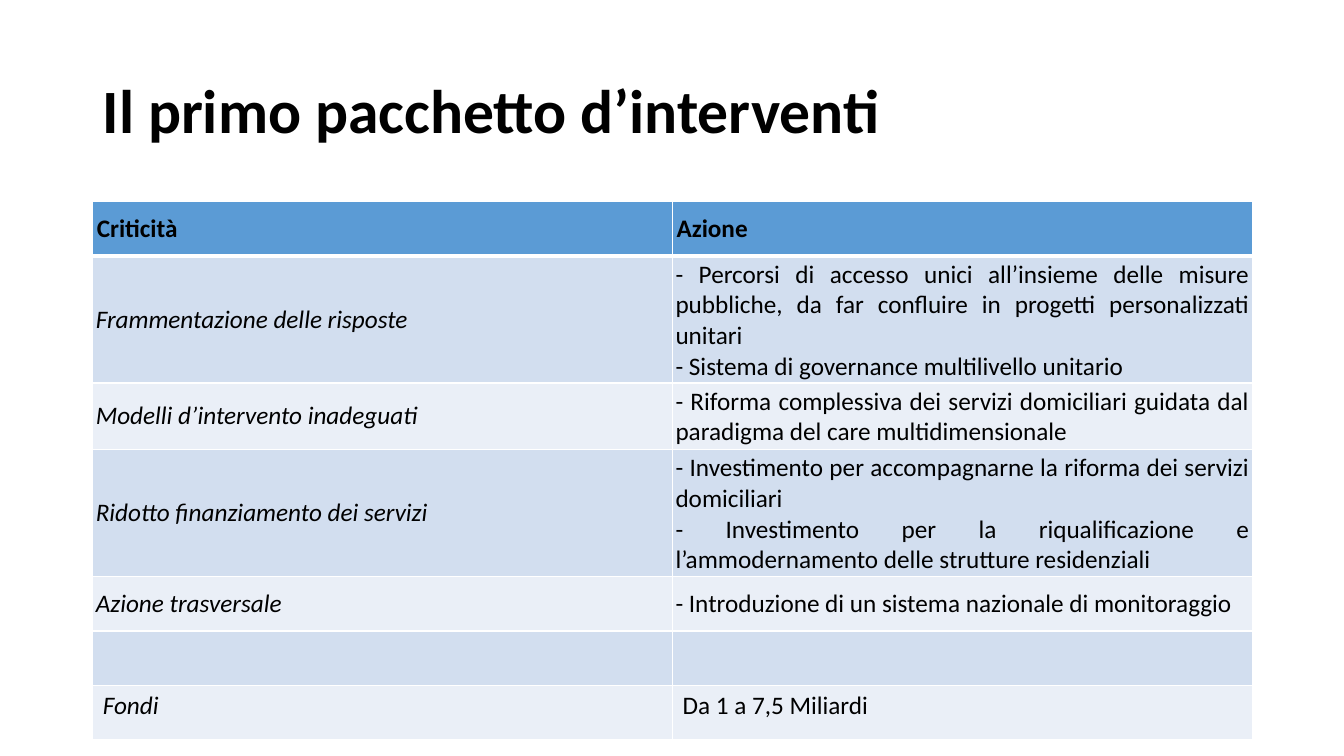
from lxml import etree
from pptx import Presentation
from pptx.dml.color import RGBColor
from pptx.enum.text import MSO_ANCHOR, PP_ALIGN
from pptx.oxml.ns import qn
from pptx.util import Inches, Pt

LEFT = PP_ALIGN.LEFT
JUSTIFY = PP_ALIGN.JUSTIFY
MIDDLE = MSO_ANCHOR.MIDDLE
TOP = MSO_ANCHOR.TOP
FONT = "Calibri"
COLOURS = {
    "text": "000000",
    "border": "FFFFFF",
    "header": "5B9BD5",
    "odd": "D2DEEF",
    "even": "EAEFF7",
}
HEADINGS = ("Criticità", "Azione")
INTERVENTIONS = [
    ("Frammentazione delle risposte", [
        "- Percorsi di accesso unici all’insieme delle misure pubbliche, "
        "da far confluire in progetti personalizzati unitari ",
        "- Sistema di governance multilivello unitario",
    ]),
    ("Modelli d’intervento inadeguati", [
        "- Riforma complessiva dei servizi domiciliari guidata dal "
        "paradigma del care multidimensionale",
    ]),
    ("Ridotto finanziamento dei servizi", [
        "- Investimento per accompagnarne la riforma dei servizi domiciliari ",
        "- Investimento per la riqualificazione e l’ammodernamento delle "
        "strutture residenziali",
    ]),
    ("Azione trasversale", [
        "- Introduzione di un sistema nazionale di monitoraggio",
    ]),
]
FUNDS = ("Fondi", "Da 1 a 7,5 Miliardi")
ROW_COUNT = len(INTERVENTIONS) + 3
ROW_HEIGHT = 0.54
COLUMN_WIDTH = 5.75


def write_text(frame, lines, size=18, bold=False, italic=False, align=LEFT, spacing=1.0):
    for index, line in enumerate(lines):
        para = frame.paragraphs[0] if index == 0 else frame.add_paragraph()
        para.alignment = align
        para.line_spacing = spacing
        span = para.add_run()
        span.text = line
        span.font.name = FONT
        span.font.size = Pt(size)
        span.font.bold = bold
        span.font.italic = italic
        span.font.color.rgb = RGBColor.from_string(COLOURS["text"])


def add_title(page, text):
    box = page.shapes.add_textbox(Inches(0.92), Inches(0.4), Inches(11.5), Inches(1.45))
    frame = box.text_frame
    frame.word_wrap = True
    frame.vertical_anchor = MIDDLE
    write_text(frame, [text], size=44, bold=True, align=JUSTIFY, spacing=0.9)


def set_borders(cell, bottom):
    properties = cell._tc.get_or_add_tcPr()
    for side, width in (("L", 1), ("R", 1), ("T", 1), ("B", bottom)):
        line = etree.SubElement(properties, qn(f"a:ln{side}"), w=str(Pt(width)))
        fill = etree.SubElement(line, qn("a:solidFill"))
        etree.SubElement(fill, qn("a:srgbClr"), val=COLOURS["border"])


def style_cell(cell, fill, bottom=1):
    set_borders(cell, bottom)
    cell.fill.solid()
    cell.fill.fore_color.rgb = RGBColor.from_string(COLOURS[fill])


def fill_cell(cell, lines, margin=None, anchor=MIDDLE, **text_format):
    cell.vertical_anchor = anchor
    if margin is not None:
        cell.margin_left = cell.margin_right = Inches(margin)
        cell.margin_top = cell.margin_bottom = Inches(0.03)
    write_text(cell.text_frame, lines, **text_format)


def add_interventions_table(page):
    table = page.shapes.add_table(
        ROW_COUNT, 2, Inches(0.92), Inches(2),
        Inches(2 * COLUMN_WIDTH), Inches(ROW_COUNT * ROW_HEIGHT),
    ).table
    for column in table.columns:
        column.width = Inches(COLUMN_WIDTH)
    for number, row in enumerate(table.rows):
        row.height = Inches(ROW_HEIGHT)
        for cell in row.cells:
            if number == 0:
                style_cell(cell, "header", bottom=3)
            else:
                style_cell(cell, "odd" if number % 2 else "even")

    for column, heading in enumerate(HEADINGS):
        fill_cell(table.cell(0, column), [heading], margin=0.04, bold=True)
    for number, (problem, actions) in enumerate(INTERVENTIONS, start=1):
        fill_cell(table.cell(number, 0), [problem], margin=0.03, italic=True)
        fill_cell(table.cell(number, 1), actions, margin=0.03, align=JUSTIFY)
    for column, text in enumerate(FUNDS):
        fill_cell(table.cell(ROW_COUNT - 1, column), [text], anchor=TOP, italic=column == 0)


def main():
    deck = Presentation()
    deck.slide_width = Inches(13.33)
    deck.slide_height = Inches(7.5)
    page = deck.slides.add_slide(deck.slide_layouts[6])
    add_title(page, "Il primo pacchetto d’interventi ")
    add_interventions_table(page)
    deck.save("out.pptx")


if __name__ == "__main__":
    main()
